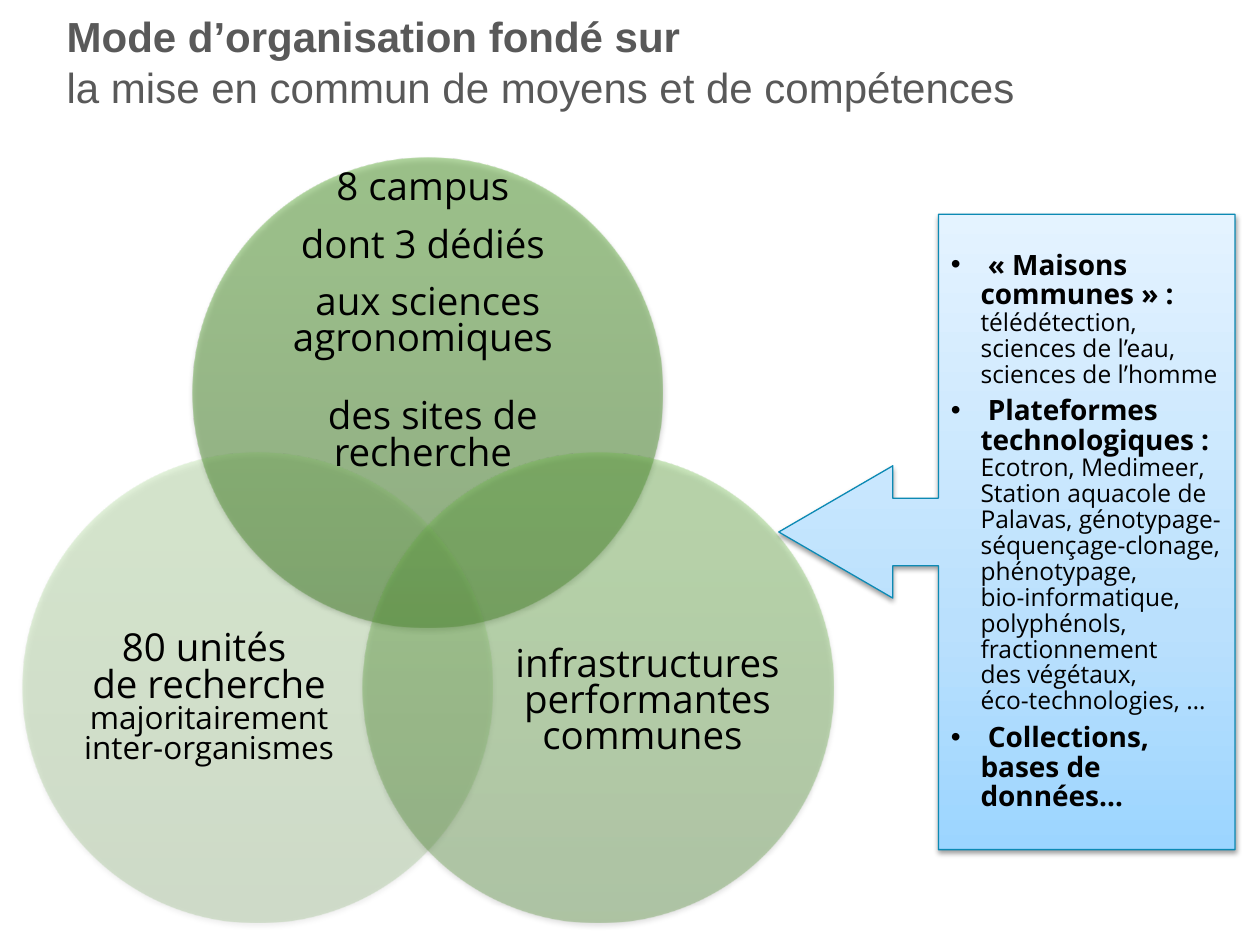
"""Build a slide on pooled research resources: a three-circle Venn diagram and a callout."""
import copy
from dataclasses import dataclass

import lxml.etree
import pptx
import pptx.dml.color
import pptx.enum.dml
import pptx.enum.shapes
import pptx.enum.text
import pptx.oxml
import pptx.oxml.ns
import pptx.util

Pt = pptx.util.Pt
RGB = pptx.dml.color.RGBColor.from_string
ALIGN = pptx.enum.text.PP_ALIGN
ANCHOR = pptx.enum.text.MSO_ANCHOR
SHAPE = pptx.enum.shapes.MSO_SHAPE
qn = pptx.oxml.ns.qn


@dataclass(frozen=True)
class Theme:
    heading_font: str = "Arial"
    body_font: str = "Open Sans"
    heading: str = "595959"
    ink: str = "000000"
    campus: tuple = ((0, "4D8433"), (80, "64AB42"), (100, "64AE40"))
    infrastructure: tuple = ((0, "518C34"), (80, "69B644"), (100, "69B942"))
    units: tuple = ((0, "569139"), (80, "70BD4A"), (100, "6FC049"))
    callout: tuple = ((0, "9CD5FF"), (35, "BAE0FD"), (100, "E4F3FF"))
    callout_line: str = "0C8AB4"
    heading_size: float = 24
    circle_size: float = 22
    detail_size: float = 18
    item_size: float = 16
    list_size: float = 14


THEME = Theme()


def add_text(paragraph, text, *, size, font=THEME.body_font, color=THEME.ink, bold=False):
    """Append formatted text to a paragraph, turning newlines into line breaks."""
    for index, line in enumerate(text.split("\n")):
        if index:
            paragraph.add_line_break()
        if line:
            run = paragraph.add_run()
            run.text = line
            run.font.name, run.font.size, run.font.bold = font, Pt(size), bold
            run.font.color.rgb = RGB(color)


def set_frame(frame, anchor, side=0, edge=0):
    """Wrap a text frame and set its anchor and margins."""
    frame.word_wrap = True
    frame.vertical_anchor = anchor
    frame.margin_left = frame.margin_right = Pt(side)
    frame.margin_top = frame.margin_bottom = Pt(edge)
    return frame


def add_box(slide, left, top, width, height, anchor=ANCHOR.MIDDLE, **margins):
    """Add a text box and return its frame."""
    box = slide.shapes.add_textbox(Pt(left), Pt(top), Pt(width), Pt(height))
    return set_frame(box.text_frame, anchor, **margins)


def next_paragraph(frame, index):
    """Return the first paragraph for index 0, otherwise a new one."""
    return frame.add_paragraph() if index else frame.paragraphs[0]


def style_paragraph(paragraph, align, spacing, after):
    """Set alignment, line spacing and space after."""
    paragraph.alignment = align
    paragraph.line_spacing = spacing
    paragraph.space_after = Pt(after)


def fill_gradient(shape, stops, opacity):
    """Fill a shape with a bottom-to-top gradient of one opacity."""
    shape.fill.gradient()
    shape.fill.gradient_angle = 90
    stop_list = shape._element.spPr.find(qn("a:gradFill")).find(qn("a:gsLst"))
    for old_stop in list(stop_list):
        stop_list.remove(old_stop)
    for position, color in stops:
        stop = lxml.etree.SubElement(stop_list, qn("a:gs"), pos=str(position * 1000))
        tint = lxml.etree.SubElement(stop, qn("a:srgbClr"), val=color)
        lxml.etree.SubElement(tint, qn("a:alpha"), val=str(opacity * 1000))


def add_shadow(shape, opacity, distance):
    """Cast a soft black shadow downwards."""
    shape.shadow.inherit = False
    effects = shape._element.spPr.find(qn("a:effectLst"))
    shadow = lxml.etree.SubElement(
        effects, qn("a:outerShdw"), blurRad=str(Pt(3.1)), dist=str(Pt(distance)),
        dir="5400000", rotWithShape="0")
    tint = lxml.etree.SubElement(shadow, qn("a:srgbClr"), val=THEME.ink)
    lxml.etree.SubElement(tint, qn("a:alpha"), val=str(opacity * 1000))


def add_circle(slide, left, top, stops, opacity):
    """Add one translucent circle of the Venn diagram."""
    diameter = Pt(268.5)
    circle = slide.shapes.add_shape(SHAPE.OVAL, Pt(left), Pt(top), diameter, diameter)
    fill_gradient(circle, stops, opacity)
    circle.line.fill.background()
    add_shadow(circle, 35, 1.8)


def add_circle_label(slide, box, paragraphs, anchor=ANCHOR.MIDDLE):
    """Write centred paragraphs, each given as its space after and its sized texts."""
    frame = add_box(slide, *box, anchor)
    for index, (after, texts) in enumerate(paragraphs):
        paragraph = next_paragraph(frame, index)
        style_paragraph(paragraph, ALIGN.CENTER, 0.79, after)
        for text, size in texts:
            add_text(paragraph, text, size=size)


def add_callout(slide, items):
    """Add the left-pointing callout with its bulleted items."""
    callout = slide.shapes.add_shape(
        SHAPE.LEFT_ARROW_CALLOUT, Pt(445), Pt(122.5), Pt(260.7), Pt(363))
    for index, ratio in enumerate((0.148, 0.145, 0.25, 0.65)):
        callout.adjustments[index] = ratio
    fill_gradient(callout, THEME.callout, 100)
    callout.line.color.rgb = RGB(THEME.callout_line)
    callout.line.width = Pt(0.75)
    add_shadow(callout, 38, 1.6)
    frame = set_frame(callout.text_frame, ANCHOR.MIDDLE, side=7.2)
    for index, (topic, details) in enumerate(items):
        paragraph = next_paragraph(frame, index)
        style_paragraph(paragraph, ALIGN.LEFT, 0.88, 5 if index < len(items) - 1 else 0)
        properties = paragraph._p.get_or_add_pPr()
        properties.set("marL", str(Pt(17)))
        properties.set("indent", str(-Pt(17)))
        lxml.etree.SubElement(properties, qn("a:buFont"), typeface=THEME.heading_font)
        lxml.etree.SubElement(properties, qn("a:buChar"), char="•")
        add_text(paragraph, topic, size=THEME.item_size, bold=True)
        add_text(paragraph, details, size=THEME.list_size)


def add_heading(slide, lead, rest):
    """Add the two-line heading with its first line in bold."""
    paragraph = add_box(slide, 31, 10, 658, 50, side=7.2, edge=3.6).paragraphs[0]
    style = dict(size=THEME.heading_size, font=THEME.heading_font, color=THEME.heading)
    add_text(paragraph, lead, bold=True, **style)
    add_text(paragraph, rest, **style)


def main():
    """Build and save the slide."""
    deck = pptx.Presentation()
    deck.slide_width, deck.slide_height = Pt(720), Pt(540)
    slide = deck.slides.add_slide(deck.slide_layouts[6])
    large, small = THEME.circle_size, THEME.detail_size

    add_heading(slide, "Mode d’organisation fondé sur ",
                "\nla mise en commun de moyens et de compétences")

    add_circle(slide, 110.3, 90, THEME.campus, 50)
    add_circle_label(slide, (146, 98, 197, 188), [
        (12, [("8 campus ", large)]),
        (12, [("dont 3 dédiés ", large)]),
        (23.7, [("aux sciences agronomiques ", large)]),
        (0, [(" des sites de recherche ", large)]),
    ], ANCHOR.TOP)

    add_circle(slide, 207.5, 258.5, THEME.infrastructure, 35)
    add_circle_label(slide, (289.5, 327.5, 161, 148), [
        (0, [("infrastructures performantes communes ", large)])])

    add_circle(slide, 13, 258.5, THEME.units, 20)
    add_circle_label(slide, (39, 325.5, 161, 148), [
        (0, [("80 unités \nde recherche ", large),
             ("majoritairement inter-organismes", small)])])

    add_callout(slide, [
        (" «\u00a0Maisons communes\u00a0» : ".replace("\u00a0", chr(160)),
         "télédétection, sciences de l’eau, sciences de l’homme"),
        (" Plateformes technologiques : ",
         "Ecotron, Medimeer, Station aquacole de Palavas, "
         "génotypage-séquençage-clonage, phénotypage,\nbio-informatique, polyphénols, "
         "fractionnement \ndes végétaux, \néco-technologies, …"),
        (" Collections, bases de données…", ""),
    ])
    deck.save("out.pptx")


if __name__ == "__main__":
    main()
